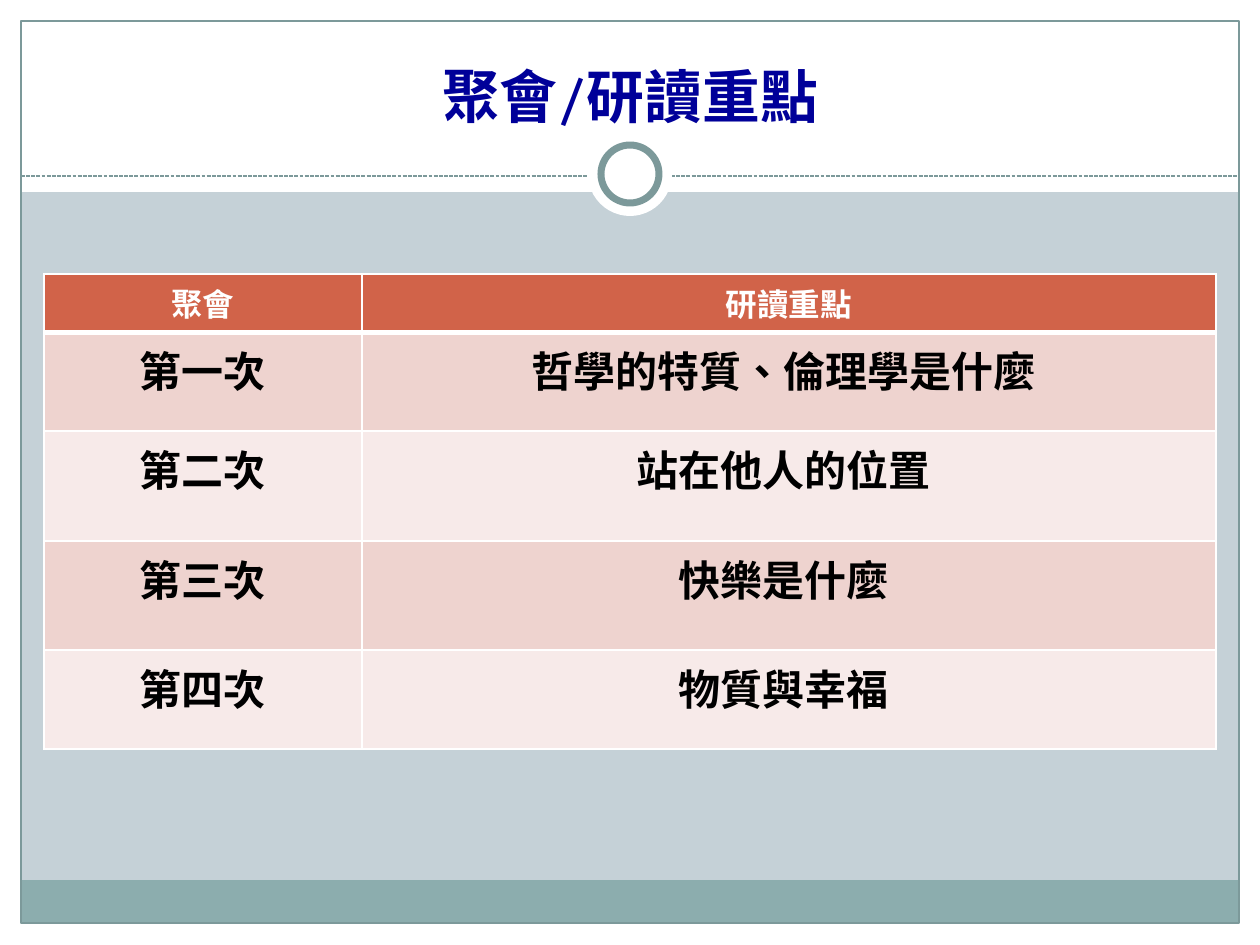
from lxml.etree import SubElement
from pptx import Presentation
from pptx.dml.color import RGBColor
from pptx.enum.dml import MSO_LINE
from pptx.enum.lang import MSO_LANGUAGE_ID as Language
from pptx.enum.shapes import MSO_CONNECTOR as Connector, MSO_SHAPE as Shape
from pptx.enum.text import MSO_ANCHOR as Anchor, PP_ALIGN as Align
from pptx.oxml.ns import qn
from pptx.util import Pt

EMU_PER_PX = 914400 / 126
WHITE, TEAL, SLATE = "FFFFFF", "8CADAE", "7C999A"
TITLE_FORMAT = {"name": "Cambria", "size": Pt(33), "bold": True}
HEADER_FORMAT = {"name": "Cambria", "size": Pt(18), "bold": True}
BODY_FORMAT = {"name": "Noto Sans CJK SC", "size": Pt(24), "bold": True}
COLUMN_WIDTHS = [318, 854]
ROW_HEIGHTS = [57, 99, 110, 109, 99]
MEETINGS = [
    ("聚會", "研讀重點"),
    ("第一次", "哲學的特質、倫理學是什麼"),
    ("第二次", "站在他人的位置"),
    ("第三次", "快樂是什麼"),
    ("第四次", "物質與幸福"),
]


def px(length):
    return round(length * EMU_PER_PX)


def rgb(color):
    return RGBColor.from_string(color)


class SlideBuilder:
    def __init__(self, slide, background):
        self.slide = slide
        self.shapes = slide.shapes
        slide.background.fill.solid()
        slide.background.fill.fore_color.rgb = rgb(background)

    def shape(self, kind, box, fill=None, line=None, width=0.75):
        shape = self.shapes.add_shape(kind, *map(px, box))
        shape.shadow.inherit = False
        if fill:
            shape.fill.solid()
            shape.fill.fore_color.rgb = rgb(fill)
        else:
            shape.fill.background()
        if line:
            shape.line.color.rgb = rgb(line)
            shape.line.width = Pt(width)
        else:
            shape.line.fill.background()

    def dashed_line(self, start, end, color):
        line = self.shapes.add_connector(Connector.STRAIGHT, *map(px, start + end))
        line.line.color.rgb = rgb(color)
        line.line.width = Pt(0.75)
        line.line.dash_style = MSO_LINE.SQUARE_DOT
        SubElement(line._element.spPr, qn("a:effectLst"))

    def text(self, frame, text, color, font_format):
        paragraph = frame.paragraphs[0]
        paragraph.alignment = Align.CENTER
        run = paragraph.add_run()
        run.text = text
        for name, value in font_format.items():
            setattr(run.font, name, value)
        run.font.language_id = Language.TRADITIONAL_CHINESE
        run.font.color.rgb = rgb(color)

    def title(self, text, box, color):
        """Fill the title placeholder and bring it in front of the bands."""
        title = self.shapes.title
        title.left, title.top, title.width, title.height = map(px, box)
        title.text_frame.vertical_anchor = Anchor.BOTTOM
        self.text(title.text_frame, text, color, TITLE_FORMAT)
        title.element.getparent().append(title.element)

    def border(self, cell, side, width):
        properties = cell._tc.get_or_add_tcPr()
        line = SubElement(properties, qn(f"a:ln{side}"), w=str(Pt(width)))
        fill = SubElement(line, qn("a:solidFill"))
        SubElement(fill, qn("a:srgbClr"), val=WHITE)

    def table(self, left, top, rows):
        box = (left, top, sum(COLUMN_WIDTHS), sum(ROW_HEIGHTS))
        table = self.shapes.add_table(len(rows), len(rows[0]), *map(px, box)).table
        for column, width in zip(table.columns, COLUMN_WIDTHS):
            column.width = px(width)
        for row, height in zip(table.rows, ROW_HEIGHTS):
            row.height = px(height)
        for i, texts in enumerate(rows):
            fill = "D16349" if i == 0 else ("F7EAE9", "EED3CF")[i % 2]
            color, font_format = (WHITE, HEADER_FORMAT) if i == 0 else ("000000", BODY_FORMAT)
            widths = {"L": 1, "R": 1, "T": 3 if i == 1 else 1, "B": 3 if i == 0 else 1}
            for j, text in enumerate(texts):
                cell = table.cell(i, j)
                for side, width in widths.items():
                    self.border(cell, side, width)
                cell.fill.solid()
                cell.fill.fore_color.rgb = rgb(fill)
                if i and j:
                    cell.margin_right = px(23)
                self.text(cell.text_frame, text, color, font_format)


def main():
    presentation = Presentation()
    presentation.slide_width, presentation.slide_height = px(1260), px(945)
    slide = presentation.slides.add_slide(presentation.slide_layouts[5])
    builder = SlideBuilder(slide, "C5D1D7")

    margins = [(0, 924, 1260, 21), (0, 0, 1260, 192), (0, 0, 21, 945), (1239, 0, 21, 945)]
    for box in margins:
        builder.shape(Shape.RECTANGLE, box, WHITE)
    builder.shape(Shape.RECTANGLE, (21, 880, 1218, 44), TEAL)
    builder.shape(Shape.RECTANGLE, (21, 21, 1218, 902), line=SLATE)
    builder.dashed_line((21, 176), (1239, 176), SLATE)
    builder.shape(Shape.OVAL, (588, 132, 84, 84), WHITE)
    builder.shape(Shape.OVAL, (601, 145, 58, 58), WHITE, SLATE, 4)

    builder.title("聚會/研讀重點", (42, 32, 1176, 104), "000099")
    builder.table(44, 274, MEETINGS)
    presentation.save("out.pptx")


if __name__ == "__main__":
    main()
